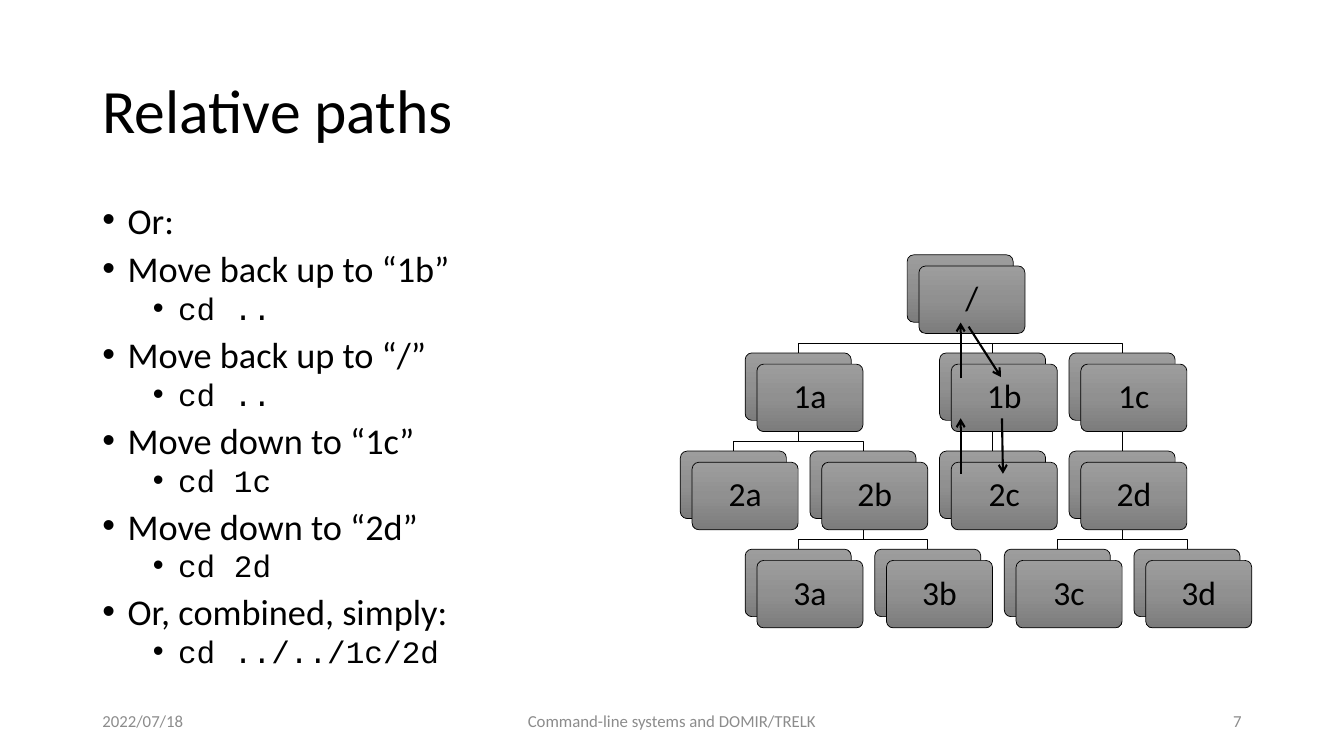
from lxml import etree
from pptx import Presentation
from pptx.dml.color import RGBColor
from pptx.enum.shapes import MSO_CONNECTOR, MSO_SHAPE
from pptx.enum.text import MSO_ANCHOR, MSO_AUTO_SIZE, PP_ALIGN
from pptx.oxml.ns import qn
from pptx.util import Pt

LEFT, CENTER, RIGHT = PP_ALIGN.LEFT, PP_ALIGN.CENTER, PP_ALIGN.RIGHT
TOP, MIDDLE = MSO_ANCHOR.TOP, MSO_ANCHOR.MIDDLE
NO_AUTOFIT = MSO_AUTO_SIZE.NONE
STRAIGHT = MSO_CONNECTOR.STRAIGHT
ROUND_RECT = MSO_SHAPE.ROUNDED_RECTANGLE
COLORS = {"text": "000000", "footer": "8C8C8C",
          "card_top": "9D9D9D", "card_mid": "909090", "card_low": "7C7C7C"}

# Content
TITLE = "Relative paths"
STEPS = [
    ("Or:", None),
    ("Move back up to “1b”", "cd .."),
    ("Move back up to “/”", "cd .."),
    ("Move down to “1c”", "cd 1c"),
    ("Move down to “2d”", "cd 2d"),
    ("Or, combined, simply:", "cd ../../1c/2d"),
]
# Directory: (column in half steps, row, parent)
TREE = {
    "/": (3.5, 0, None),
    "1a": (1, 1, "/"), "1b": (4, 1, "/"), "1c": (6, 1, "/"),
    "2a": (0, 2, "1a"), "2b": (2, 2, "1a"), "2c": (4, 2, "1b"), "2d": (6, 2, "1c"),
    "3a": (1, 3, "2b"), "3b": (3, 3, "2b"), "3c": (5, 3, "2d"), "3d": (7, 3, "2d"),
}
# Moves between directories: x1, y1, x2, y2
MOVES = [(686.2, 338.4, 686.2, 298.8), (686.2, 270, 686.2, 230.4),
         (691.9, 233.3, 715, 269.3), (715.7, 298.8, 716.4, 338.4)]
# Footer: text, left, width, alignment
FOOTER = [("2022/07/18", 66, 216, LEFT),
          ("Command-line systems and DOMIR/TRELK", 318, 324, CENTER),
          ("7", 678, 216, RIGHT)]

# Tree geometry in points
TREE_X, TREE_Y, COL_STEP, ROW_STEP = 486, 182, 46.28, 70.1
CARD_W, CARD_H, SHIFT_X, SHIFT_Y = 75.75, 48.2, 8.4, 8
ELBOW_DROP = 15.1

prs = Presentation()
prs.slide_width, prs.slide_height = Pt(960), Pt(540)
s = prs.slides.add_slide(prs.slide_layouts[1])


def rgb(name):
    return RGBColor.from_string(COLORS[name])


def write(p, text, size, color="text", font="Calibri", align=LEFT, spacing=1.0, before=0):
    p.alignment, p.line_spacing, p.space_before = align, spacing, Pt(before)
    r = p.add_run()
    r.text = text
    r.font.size, r.font.name = Pt(size), font
    r.font.color.rgb = rgb(color)


def place(sp, x, y, w, h, anchor=MIDDLE):
    sp.left, sp.top, sp.width, sp.height = Pt(x), Pt(y), Pt(w), Pt(h)
    tf = sp.text_frame
    tf.word_wrap, tf.auto_size, tf.vertical_anchor = True, NO_AUTOFIT, anchor
    return tf


def set_bullet(p, level):
    p.level = level
    pPr = p._p.get_or_add_pPr()
    pPr.set("marL", str(Pt(18 + 36 * level)))
    pPr.set("indent", str(Pt(-18)))
    etree.SubElement(pPr, qn("a:buFont"), typeface="Arial")
    etree.SubElement(pPr, qn("a:buChar"), char="•")


def style_line(line, width):
    line.color.rgb = rgb("text")
    line.width = Pt(width)


def add_line(x1, y1, x2, y2, width):
    c = s.shapes.add_connector(STRAIGHT, Pt(x1), Pt(y1), Pt(x2), Pt(y2))
    style_line(c.line, width)
    etree.SubElement(c._element.spPr, qn("a:effectLst"))
    return c


def add_card(x, y):
    sp = s.shapes.add_shape(ROUND_RECT, Pt(x), Pt(y), Pt(CARD_W), Pt(CARD_H))
    sp.adjustments[0] = 0.1
    sp.shadow.inherit = False
    sp.fill.gradient()
    sp.fill.gradient_angle = 270
    stops = sp._element.spPr.find(".//" + qn("a:gsLst"))
    stops.clear()
    for pos, name in ((0, "card_top"), (50000, "card_mid"), (100000, "card_low")):
        gs = etree.SubElement(stops, qn("a:gs"), pos=str(pos))
        etree.SubElement(gs, qn("a:srgbClr"), val=COLORS[name])
    style_line(sp.line, 0.5)
    return sp


def corner(name):
    col, row, _ = TREE[name]
    return TREE_X + col * COL_STEP, TREE_Y + row * ROW_STEP


# Title and command list
tf = place(s.shapes.title, 66, 28.75, 828, 104.4)
write(tf.paragraphs[0], TITLE, 44, spacing=0.9)
tf = place(s.placeholders[1], 66, 143.75, 408, 342.6, TOP)
for i, (step, command) in enumerate(STEPS):
    p = tf.add_paragraph() if i else tf.paragraphs[0]
    write(p, step, 25.9, spacing=0.8, before=10)
    set_bullet(p, 0)
    if command:
        p = tf.add_paragraph()
        write(p, command, 22.2, font="Courier New", spacing=0.8, before=5)
        set_bullet(p, 1)

# Directory tree: back cards, branches, front cards
backs = {name: add_card(*corner(name)) for name in TREE}
for name, (col, row, parent) in TREE.items():
    if parent is None:
        continue
    (px, py), (cx, cy) = corner(parent), corner(name)
    x1, y1, x2 = px + CARD_W / 2, py + CARD_H, cx + CARD_W / 2
    if px == cx:
        c = add_line(x1, y1, x2, cy, 0.5)
        c.begin_connect(backs[parent], 2)
        c.end_connect(backs[name], 0)
        continue
    bend = y1 + ELBOW_DROP
    fb = s.shapes.build_freeform(Pt(x1), Pt(y1))
    fb.add_line_segments([(Pt(x), Pt(y)) for x, y in ((x1, bend), (x2, bend), (x2, cy))],
                         close=False)
    sp = fb.convert_to_shape()
    sp.fill.background()
    sp.shadow.inherit = False
    style_line(sp.line, 0.5)
for name in TREE:
    x, y = corner(name)
    sp = add_card(x + SHIFT_X, y + SHIFT_Y)
    tf = sp.text_frame
    tf.vertical_anchor = MIDDLE
    write(tf.paragraphs[0], name, 24, align=CENTER, spacing=0.9)

# Move arrows
for move in MOVES:
    c = add_line(*move, 1.5)
    etree.SubElement(c._element.spPr.find(qn("a:ln")), qn("a:tailEnd"), type="arrow")

# Footer
for text, x, w, align in FOOTER:
    tf = place(s.shapes.add_textbox(0, 0, 0, 0), x, 500.5, w, 28.75)
    write(tf.paragraphs[0], text, 12, "footer", align=align)

prs.save("out.pptx")
